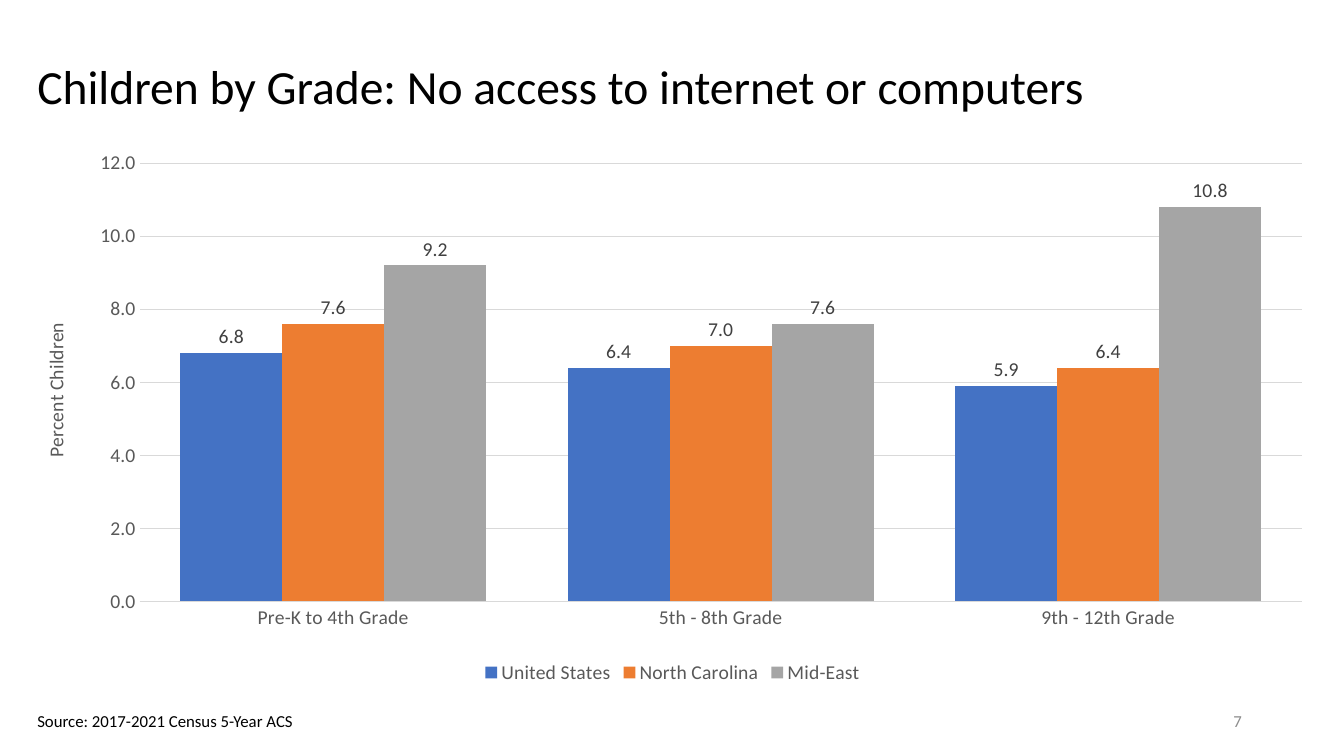
from lxml.etree import SubElement
from pptx import Presentation
from pptx.chart.data import CategoryChartData
from pptx.dml.color import RGBColor
from pptx.enum.chart import (XL_CHART_TYPE, XL_LABEL_POSITION,
                             XL_LEGEND_POSITION, XL_TICK_MARK)
from pptx.enum.text import MSO_ANCHOR, PP_ALIGN
from pptx.oxml.ns import qn
from pptx.util import Cm, Pt

TITLE = "Children by Grade: No access to internet or computers"
SOURCE = "Source: 2017-2021 Census 5-Year ACS"
PAGE = "7"
AXIS_TITLE = "Percent Children"
GRADES = ["Pre-K to 4th Grade", "5th - 8th Grade", "9th - 12th Grade"]
BLACK = RGBColor(0x00, 0x00, 0x00)
PAGE_GRAY = RGBColor(0x8C, 0x8C, 0x8C)
AXIS_GRAY = RGBColor(0x59, 0x59, 0x59)
LABEL_GRAY = RGBColor(0x40, 0x40, 0x40)
GRID_GRAY = RGBColor(0xD9, 0xD9, 0xD9)
REGIONS = [
    ("United States", (6.8, 6.4, 5.9), RGBColor(0x44, 0x72, 0xC4)),
    ("North Carolina", (7.6, 7.0, 6.4), RGBColor(0xED, 0x7D, 0x31)),
    ("Mid-East", (9.2, 7.6, 10.8), RGBColor(0xA5, 0xA5, 0xA5)),
]
PLOT = {"x": 0.087, "y": 0.035, "w": 0.901, "h": 0.805}
NUMBER_FORMAT = "#,##0.0"
FONT = "Calibri"
LEFT = Cm(0.69)


def style(font, size, color):
    font.name = FONT
    font.size = Pt(size)
    font.bold = False
    font.color.rgb = color


def add_text(slide, text, box, size, color, anchor=MSO_ANCHOR.MIDDLE,
             align=PP_ALIGN.LEFT, wrap=True):
    frame = slide.shapes.add_textbox(*box).text_frame
    frame.text = text
    frame.word_wrap = wrap
    frame.vertical_anchor = anchor
    paragraph = frame.paragraphs[0]
    paragraph.alignment = align
    style(paragraph.runs[0].font, size, color)
    return paragraph


def gray_line(line):
    line.color.rgb = GRID_GRAY
    line.width = Pt(0.75)


def fix_plot_area(chart):
    """Place the inner plot area at the PLOT fractions of the chart."""
    area = chart.plots[0]._element.getparent()
    layout = area.find(qn("c:layout"))
    if layout is None:
        layout = SubElement(area, qn("c:layout"))
        area.insert(0, layout)
    manual = SubElement(layout, qn("c:manualLayout"))
    settings = {"layoutTarget": "inner", "xMode": "edge", "yMode": "edge", **PLOT}
    for name, value in settings.items():
        SubElement(manual, qn(f"c:{name}")).set("val", str(value))


def add_grade_chart(slide):
    data = CategoryChartData(number_format=NUMBER_FORMAT)
    data.categories = GRADES
    for region, percents, _ in REGIONS:
        data.add_series(region, percents)
    chart = slide.shapes.add_chart(XL_CHART_TYPE.COLUMN_CLUSTERED, LEFT, Cm(3.63),
                                   Cm(32.51), Cm(13.72), data).chart
    style(chart.font, 14, BLACK)
    chart.has_title = False
    chart.has_legend = True
    chart.legend.position = XL_LEGEND_POSITION.BOTTOM
    chart.legend.include_in_layout = False
    style(chart.legend.font, 14, AXIS_GRAY)
    fix_plot_area(chart)

    plot = chart.plots[0]
    plot.gap_width = 80
    plot.overlap = 0
    plot.vary_by_categories = False
    for series, (_, _, color) in zip(plot.series, REGIONS):
        series.format.fill.solid()
        series.format.fill.fore_color.rgb = color
        labels = series.data_labels
        labels.show_value = True
        labels.position = XL_LABEL_POSITION.OUTSIDE_END
        labels.number_format = NUMBER_FORMAT
        labels.number_format_is_linked = False
        style(labels.font, 14, LABEL_GRAY)

    grades, percent = chart.category_axis, chart.value_axis
    for axis in (grades, percent):
        axis.major_tick_mark = XL_TICK_MARK.NONE
        axis.minor_tick_mark = XL_TICK_MARK.NONE
        style(axis.tick_labels.font, 14, AXIS_GRAY)
    gray_line(grades.format.line)
    percent.minimum_scale, percent.maximum_scale, percent.major_unit = 0, 12, 2
    percent.tick_labels.number_format = NUMBER_FORMAT
    percent.tick_labels.number_format_is_linked = False
    percent.format.line.fill.background()
    percent.has_major_gridlines = True
    gray_line(percent.major_gridlines.format.line)
    percent_title = percent.axis_title.text_frame
    percent_title.text = AXIS_TITLE
    style(percent_title.paragraphs[0].runs[0].font, 14, AXIS_GRAY)


def main():
    deck = Presentation()
    deck.slide_width, deck.slide_height = Cm(33.87), Cm(19.05)
    slide = deck.slides.add_slide(deck.slide_layouts[6])
    title = add_text(slide, TITLE, (LEFT, Cm(0.86), Cm(32.41), Cm(2.77)), 34, BLACK)
    title.line_spacing = 0.9
    add_text(slide, PAGE, (Cm(23.93), Cm(17.65), Cm(7.62), Cm(1.02)), 12, PAGE_GRAY,
             align=PP_ALIGN.RIGHT)
    add_text(slide, SOURCE, (LEFT, Cm(17.78), Cm(7.06), Cm(0.76)), 12, BLACK,
             anchor=MSO_ANCHOR.TOP, wrap=False)
    add_grade_chart(slide)
    deck.save("out.pptx")


if __name__ == "__main__":
    main()
